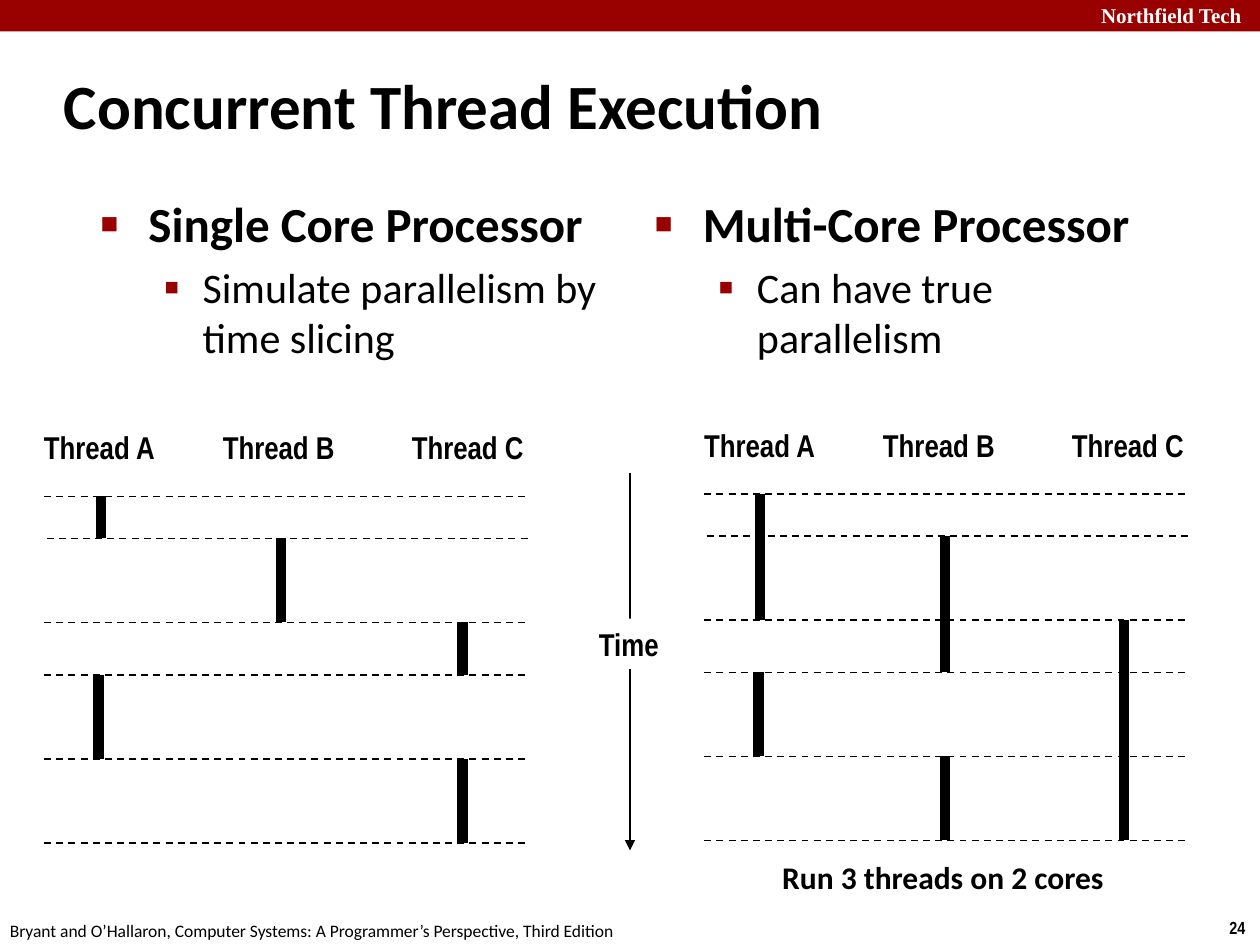
from lxml.etree import SubElement
from pptx import Presentation
from pptx.dml.color import RGBColor
from pptx.enum.dml import MSO_LINE
from pptx.enum.shapes import MSO_CONNECTOR, MSO_SHAPE
from pptx.enum.text import MSO_ANCHOR, PP_ALIGN
from pptx.oxml.ns import qn
from pptx.util import Inches, Pt

color = RGBColor.from_string
BLACK, WHITE, RED = "000000", "FFFFFF", "990000"
NARROW, SANS, SERIF = "Arial Narrow", "Calibri", "Times New Roman"

deck = Presentation()
deck.slide_width, deck.slide_height = Inches(10), Inches(7.5)
page = deck.slides.add_slide(deck.slide_layouts[6])

# Grid: 100 columns by 75 rows
COL = deck.slide_width / 100
ROW = deck.slide_height / 75


def add_text(para, text, size, font, bold=True, ink=BLACK):
    span = para.add_run()
    span.text = text
    span.font.size, span.font.name, span.font.bold = Pt(size), font, bold
    span.font.color.rgb = color(ink)


def add_line(x1, y1, x2, y2, weight):
    line = page.shapes.add_connector(
        MSO_CONNECTOR.STRAIGHT,
        round(x1 * COL), round(y1 * ROW), round(x2 * COL), round(y2 * ROW))
    line.line.color.rgb = color(BLACK)
    line.line.width = Pt(weight)
    SubElement(line._element.spPr, qn("a:effectLst"))
    return line


# Banner
banner = page.shapes.add_shape(MSO_SHAPE.RECTANGLE, 0, 0, deck.slide_width, round(2.5 * ROW))
banner.shadow.inherit = False
banner.fill.solid()
banner.fill.fore_color.rgb = color(RED)
banner.line.fill.background()

# Title
box = page.shapes.add_textbox(
    round(4.1 * COL), round(4.1 * ROW), round(83 * COL), round(8.3 * ROW))
box.text_frame.word_wrap = True
box.text_frame.vertical_anchor = MSO_ANCHOR.MIDDLE
add_text(box.text_frame.paragraphs[0], "Concurrent Thread Execution", 36, SANS)

# Bulleted columns: margin, hanging indent, bullet, bullet size, text size, bold
levels = [(0.38, 0.38, "■", 60, 28, True), (0.81, 0.31, "▪", 110, 24, False)]
columns = [
    (7, ("Single Core Processor", "Simulate parallelism by time slicing")),
    (51, ("Multi-Core Processor", "Can have true parallelism")),
]
for left, texts in columns:
    box = page.shapes.add_textbox(
        round(left * COL), round(14.9 * ROW), round(42.3 * COL), round(54.4 * ROW))
    frame = box.text_frame
    frame.word_wrap = True
    for level, (text, style) in enumerate(zip(texts, levels)):
        margin, hang, mark, mark_size, size, bold = style
        para = frame.add_paragraph() if level else frame.paragraphs[0]
        para.level = level
        para.space_before = Pt(0.2 * size)
        props = para._p.get_or_add_pPr()
        props.set("marL", str(Inches(margin)))
        props.set("indent", str(-Inches(hang)))
        SubElement(SubElement(props, qn("a:buClr")), qn("a:srgbClr"), val=RED)
        SubElement(props, qn("a:buSzPct"), val=str(mark_size * 1000))
        SubElement(props, qn("a:buFont"), typeface="Arial")
        SubElement(props, qn("a:buChar"), char=mark)
        add_text(para, text, size, SANS, bold)

# Time axis, with its label over the middle
axis = add_line(50, 37.5, 50, 67.5, 1)
SubElement(axis.line._get_or_add_ln(), qn("a:tailEnd"), type="triangle")
label = page.shapes.add_shape(
    MSO_SHAPE.RECTANGLE, round(46.5 * COL), round(49.1 * ROW), round(6.8 * COL), round(4 * ROW))
label.shadow.inherit = False
label.fill.solid()
label.fill.fore_color.rgb = color(WHITE)
label.line.fill.background()
label.text_frame.word_wrap = False
label.text_frame.paragraphs[0].alignment = PP_ALIGN.CENTER
add_text(label.text_frame.paragraphs[0], "Time", 18, NARROW)

# Single-line texts: left, top, width, height, text, size, font, bold, ink
captions = [
    (86.4, -0.3, 14.3, 3, "Northfield Tech", 12, SERIF, True, WHITE),
    (96.6, 72.3, 3.4, 2.7, "24", 10, NARROW, True, BLACK),
    (-0.2, 72.5, 50.8, 2.7, "Bryant and O’Hallaron, Computer Systems: "
     "A Programmer’s Perspective, Third Edition", 10, SANS, False, BLACK),
    (61.1, 67.6, 27.8, 4, "Run 3 threads on 2 cores", 18, SANS, True, BLACK),
]

# Timelines: left, top, then bars as (offset, first time, last time)
timelines = [
    (3.5, 39.4, [(4.5, 0, 1), (18.8, 1, 2), (33.2, 2, 3), (4.3, 3, 4), (33.2, 4, 5)]),
    (55.9, 39.2, [(4.4, 0, 2), (19.1, 1, 3), (33.3, 2, 5), (4.3, 3, 4), (19.1, 4, 5)]),
]
# Switch times, in thirds of an inch from the top line
times = [third * 10 / 3 for third in (0, 1, 3, 4.25, 6.25, 8.25)]
for left, top, bars in timelines:
    for name, offset in zip("ABC", (-1, 13.2, 28.2)):
        captions.append((left + offset, top - 5.9, 11, 4, f"Thread {name}", 18, NARROW, True, BLACK))
    for offset, start, end in bars:
        add_line(left + offset, top + times[start], left + offset, top + times[end], 6)
    for index, time in enumerate(times):
        shift = 0.2 if index == 1 else 0
        rule = add_line(left + shift, top + time, left + shift + 38.2, top + time, 1)
        rule.line.dash_style = MSO_LINE.DASH

for left, top, width, height, text, size, font, bold, ink in captions:
    box = page.shapes.add_textbox(
        round(left * COL), round(top * ROW), round(width * COL), round(height * ROW))
    box.text_frame.word_wrap = False
    add_text(box.text_frame.paragraphs[0], text, size, font, bold, ink)

deck.save("out.pptx")
